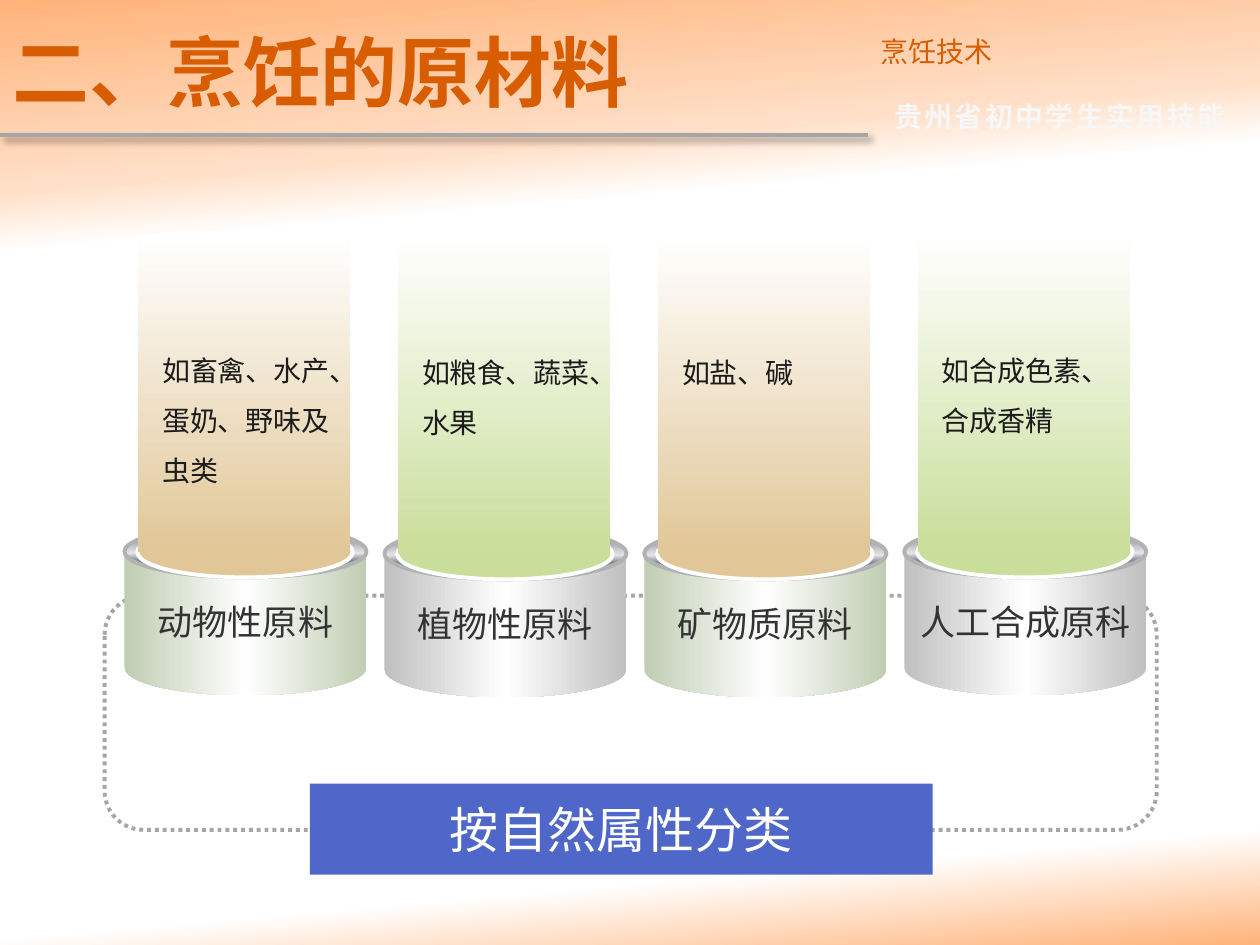
from dataclasses import dataclass

from lxml import etree
from pptx import Presentation
from pptx import util as u
from pptx.dml.color import RGBColor
from pptx.enum import dml, shapes, text
from pptx.oxml.ns import qn

Cm, Pt = u.Cm, u.Pt
KIND = shapes.MSO_SHAPE


@dataclass(frozen=True)
class Theme:
    cjk: str = "Noto Sans CJK SC"
    latin: str = "Arial"
    title_size: int = 44
    banner_size: int = 28
    label_size: int = 20
    body_size: int = 16
    line_width: float = 2.25
    accent: str = "D85C00"
    faint: str = "F7F7F7"
    white: str = "FFFFFF"
    body: str = "1C1C1C"
    label: str = "333333"
    rule: str = "A6A6A6"
    rim_line: str = "B2B2B2"
    banner: str = "4E67C8"
    tan: str = "E1C797"
    lime: str = "C9DE9A"
    sage: str = "C0CDB3"
    silver: str = "C0C0C0"
    metal: tuple = ((0, "E6E6E6"), (15, "7D8496"), (53, "E6E6E6"),
                    (68, "7D8496"), (93, "E6E6E6"), (100, "FFFFFF"))
    backdrop: tuple = ((0, "FFB37A"), (18, "FFDFC7"), (24, "FFFFFF"),
                       (89, "FFFFFF"), (100, "FFB37A"))


THEME = Theme()


def set_gradient(fill, owner, stops, angle):
    """Give a fill any number of stops; the angle runs clockwise."""
    fill.gradient()
    gradient = owner.find(".//" + qn("a:gradFill"))
    for child in list(gradient):
        gradient.remove(child)
    stop_list = etree.SubElement(gradient, qn("a:gsLst"))
    for position, color in stops:
        stop = etree.SubElement(stop_list, qn("a:gs"), pos=str(position * 1000))
        etree.SubElement(stop, qn("a:srgbClr"), val=color)
    etree.SubElement(gradient, qn("a:lin"), ang=str(angle * 60000), scaled="0")


def add_shape(parent, kind, place, fill=None, angle=90, line=None, adjust=None):
    """Add a preset shape; fill is a colour, a list of stops or None."""
    shape = parent.add_shape(kind, *map(Cm, place))
    shape.shadow.inherit = False
    if adjust is not None:
        shape.adjustments[0] = adjust
    if fill is None:
        shape.fill.background()
    elif isinstance(fill, str):
        shape.fill.solid()
        shape.fill.fore_color.rgb = RGBColor.from_string(fill)
    else:
        set_gradient(shape.fill, shape._element.spPr, fill, angle)
    if line:
        shape.line.color.rgb = RGBColor.from_string(line)
        shape.line.width = Pt(THEME.line_width)
    else:
        shape.line.fill.background()
    return shape


def add_text(parent, place, words, size, color, face=THEME.cjk, bold=False,
             align=text.PP_ALIGN.LEFT, spacing=None, middle=False, tracking=0):
    box = parent.add_textbox(*map(Cm, place))
    frame = box.text_frame
    frame.word_wrap = True
    if middle:
        frame.vertical_anchor = text.MSO_ANCHOR.MIDDLE
    else:
        frame.auto_size = text.MSO_AUTO_SIZE.SHAPE_TO_FIT_TEXT
    para = frame.paragraphs[0]
    para.text = words
    para.alignment = align
    if spacing:
        para.line_spacing = spacing
    font = para.font
    font.size, font.bold, font.name = Pt(size), bold, face
    font.color.rgb = RGBColor.from_string(color)
    etree.SubElement(font._rPr, qn("a:ea"), typeface=face)
    if tracking:
        font._rPr.set("spc", str(tracking))


def add_rule(parent, start, end):
    """Add a straight line with a soft shadow."""
    rule = parent.add_connector(shapes.MSO_CONNECTOR.STRAIGHT,
                                *map(Cm, (*start, *end)))
    rule.line.color.rgb = RGBColor.from_string(THEME.rule)
    rule.line.width = Pt(THEME.line_width)
    effects = etree.SubElement(rule._element.spPr, qn("a:effectLst"))
    shadow = etree.SubElement(effects, qn("a:outerShdw"), blurRad=str(Pt(4)),
                              dist=str(Pt(3)), dir=str(45 * 60000))
    color = etree.SubElement(shadow, qn("a:srgbClr"), val="000000")
    etree.SubElement(color, qn("a:alpha"), val="40000")


def add_column(slide, left, drop, label, examples, height, beam, drum):
    """Add one drum with a beam of light rising from it."""
    parts = slide.shapes.add_group_shape().shapes
    white = THEME.white
    # Drum and its rim
    add_shape(parts, KIND.CAN, (left, 10.54 + drop, 4.88, 3.48),
              ((0, drum), (50, white), (100, drum)), angle=0, adjust=0.32)
    add_shape(parts, KIND.OVAL, (left, 10.6 + drop, 4.88, 1.04),
              THEME.metal, line=THEME.rim_line)
    add_shape(parts, KIND.OVAL, (left + 0.26, 10.62 + drop, 4.34, 1.02),
              beam, line=white)
    # Beam
    add_shape(parts, KIND.RECTANGLE, (left + 0.28, 4.72 + drop, 4.27, 6.4),
              ((0, white), (100, beam)))
    # Words
    add_text(parts, (left + 0.51, 6.66 + drop, 4.04, height), examples,
             THEME.body_size, THEME.body, spacing=1.5)
    add_text(parts, (left, 11.99 + drop, 4.88, 1.12), label,
             THEME.label_size, THEME.label, align=text.PP_ALIGN.CENTER)


def main():
    deck = Presentation()
    deck.slide_width, deck.slide_height = Cm(25.4), Cm(19.05)
    slide = deck.slides.add_slide(deck.slide_layouts[6])
    page = slide.shapes
    set_gradient(slide.background.fill, slide._element, THEME.backdrop, 85)

    # Dotted frame behind the drums
    frame = add_shape(page, KIND.ROUNDED_RECTANGLE, (2.11, 12.01, 21.21, 4.72),
                      line=THEME.rule)
    frame.line.dash_style = dml.MSO_LINE.ROUND_DOT

    # Header
    add_rule(page, (0, 2.72), (17.5, 2.72))
    add_text(page, (17.5, 0.58, 7.9, 0.94), "烹饪技术", THEME.body_size,
             THEME.accent, align=text.PP_ALIGN.JUSTIFY)
    add_text(page, (17.78, 1.89, 7.62, 0.94), "贵州省初中学生实用技能",
             THEME.body_size, THEME.faint, bold=True, tracking=140)
    add_text(page, (0, 0.13, 17.5, 2.59), "二、烹饪的原材料", THEME.title_size,
             THEME.accent, bold=True, middle=True)

    # Banner
    add_shape(page, KIND.ROUNDED_RECTANGLE, (6.25, 15.8, 12.55, 1.83),
              THEME.banner, adjust=0)
    add_text(page, (6.83, 16, 11.38, 1.45), "按自然属性分类", THEME.banner_size,
             THEME.white, face=THEME.latin, align=text.PP_ALIGN.CENTER)

    # Four columns; the inner two sit slightly lower
    columns = (("动物性原料", "如畜禽、水产、蛋奶、野味及虫类", 3.23),
               ("植物性原料", "如粮食、蔬菜、水果", 2.18),
               ("矿物质原料", "如盐、碱", 1.17),
               ("人工合成原科", "如合成色素、合成香精", 2.18))
    styles = ((THEME.tan, THEME.sage), (THEME.lime, THEME.silver))
    for index, column in enumerate(columns):
        drop = 0.04 if index in (1, 2) else 0
        add_column(slide, 2.51 + 5.24 * index, drop, *column, *styles[index % 2])

    deck.save("out.pptx")


if __name__ == "__main__":
    main()
